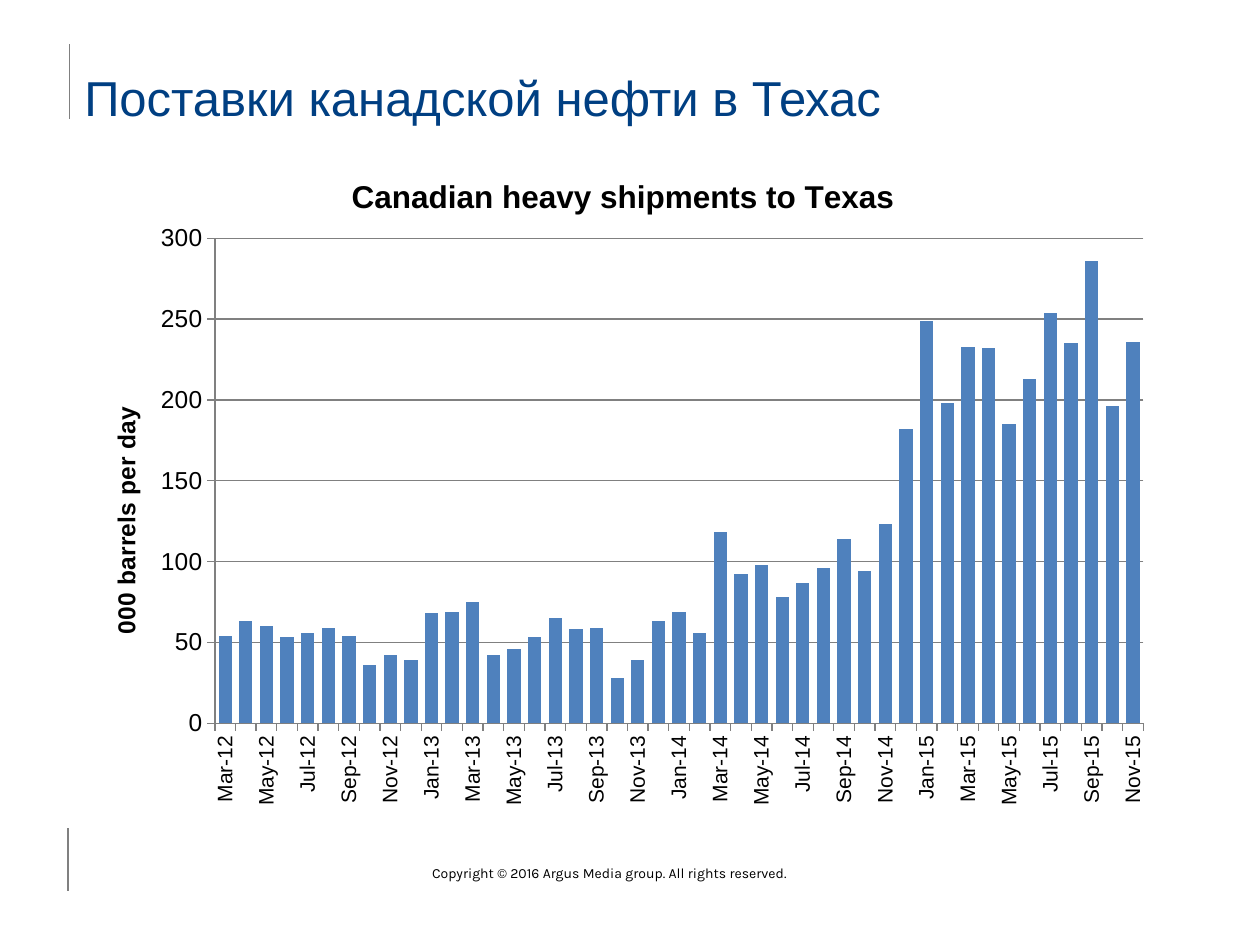
from itertools import accumulate

from lxml import etree
from pptx import Presentation
from pptx.chart.data import CategoryChartData
from pptx.dml.color import RGBColor
from pptx.enum import chart as ch, shapes, text
from pptx.oxml.ns import qn
from pptx.util import Cm, Pt

BLACK, GREY, NAVY, BLUE = "000000", "808080", "003F82", "4F81BD"

# Month ends as date serials, from March 2012 to November 2015
MONTH_DAYS = [30, 31, 30, 31, 31, 30, 31, 30, 31, 31, 28, 31]  # April to March
MONTH_ENDS = list(accumulate((MONTH_DAYS * 4)[:44], initial=40999))
SHIPMENTS = [
    54, 63, 60, 53, 56, 59, 54, 36, 42, 39,
    68, 69, 75, 42, 46, 53, 65, 58, 59, 28, 39, 63,
    69, 56, 118, 92, 98, 78, 87, 96, 114, 94, 123, 182,
    249, 198, 233, 232, 185, 213, 254, 235, 286, 196, 236,
]


def rgb(value):
    return RGBColor.from_string(value)


def set_attrs(obj, **values):
    for name, value in values.items():
        setattr(obj, name, value)


def set_font(font, size, color=BLACK, name="Arial", bold=False):
    set_attrs(font, size=Pt(size), name=name, bold=bold)
    font.color.rgb = rgb(color)


def set_line(line, color=GREY):
    line.color.rgb = rgb(color)
    line.width = Pt(0.75)


def add_rule(s, x, top, bottom):
    c = s.shapes.add_connector(shapes.MSO_CONNECTOR.STRAIGHT,
                               Cm(x), Cm(bottom), Cm(x), Cm(top))
    set_line(c.line)
    etree.SubElement(c._element.spPr, qn("a:effectLst"))


def add_text(s, box, words, font, **frame):
    tf = s.shapes.add_textbox(*map(Cm, box)).text_frame
    set_attrs(tf, word_wrap=True, **frame)
    r = tf.paragraphs[0].add_run()
    r.text = words
    set_font(r.font, **font)


def set_layout(element, index, **values):
    """Place a chart part by fractions of the chart area."""
    for old in element.findall(qn("c:layout")):
        element.remove(old)
    layout = etree.Element(qn("c:layout"))
    element.insert(index, layout)
    manual = etree.SubElement(layout, qn("c:manualLayout"))
    for tag, value in values.items():
        etree.SubElement(manual, qn("c:" + tag), val=str(value))


def set_title(title, words, size, x, y):
    r = title.text_frame.paragraphs[0].add_run()
    r.text = words
    set_font(r.font, size, bold=True)
    set_layout(title._element, 1, xMode="edge", yMode="edge", x=x, y=y)


def style_axis(axis, size, number_format):
    set_attrs(axis, major_tick_mark=ch.XL_TICK_MARK.OUTSIDE,
              minor_tick_mark=ch.XL_TICK_MARK.NONE)
    set_attrs(axis.tick_labels, number_format=number_format,
              number_format_is_linked=False)
    set_font(axis.tick_labels.font, size)
    set_line(axis.format.line)


def add_column_chart(s, box):
    data = CategoryChartData(number_format="0")
    data.categories = MONTH_ENDS
    data.categories.number_format = "mmm\\-yy"
    data.add_series("Series 1", SHIPMENTS)
    chart = s.shapes.add_chart(ch.XL_CHART_TYPE.COLUMN_CLUSTERED,
                               *map(Cm, box), data).chart
    set_font(chart.font, 10)
    chart.has_legend = False
    set_title(chart.chart_title, "Canadian heavy shipments to Texas", 18, 0.25, 0.05)

    # Columns
    plot = chart.plots[0]
    set_attrs(plot, gap_width=55, vary_by_categories=False)
    fill = plot.series[0].format.fill
    fill.solid()
    fill.fore_color.rgb = rgb(BLUE)

    # Value axis
    val = chart.value_axis
    style_axis(val, 14, "0")
    set_attrs(val, minimum_scale=0, maximum_scale=300, major_unit=50,
              has_major_gridlines=True)
    set_line(val.major_gridlines.format.line)
    set_title(val.axis_title, "000 barrels per day", 14, 0.03, 0.39)
    val.axis_title.text_frame._txBody.bodyPr.set("rot", "-5400000")

    # Month axis: upright labels, every second month
    cat = chart.category_axis
    style_axis(cat, 12, "mmm\\-yy")
    ax = cat._element
    ax.find(qn("c:txPr")).find(qn("a:bodyPr")).set("rot", "-5400000")
    last = ax.find(qn("c:noMultiLvlLbl"))
    for tag, step in (("c:tickLblSkip", "2"), ("c:tickMarkSkip", "1")):
        skip = etree.Element(qn(tag), val=step)
        last.addprevious(skip)

    set_layout(ax.getparent(), 0, layoutTarget="inner", xMode="edge",
               yMode="edge", x=0.13, y=0.15, w=0.85, h=0.71)


def main():
    prs = Presentation()
    set_attrs(prs, slide_width=Cm(25.4), slide_height=Cm(19.05))
    s = prs.slides.add_slide(prs.slide_layouts[6])

    # Margin rules
    add_rule(s, 1.4, 0.89, 2.39)
    add_rule(s, 1.37, 16.69, 17.96)

    # Heading
    add_text(s, (1.7, 0.84, 22.23, 1.7), "Поставки канадской нефти в Техас",
             {"size": 28, "color": NAVY},
             vertical_anchor=text.MSO_ANCHOR.BOTTOM,
             margin_left=0, margin_top=0, margin_right=0, margin_bottom=0)

    # Chart
    add_column_chart(s, (1.47, 2.74, 22.02, 13.77))

    # Copyright line
    add_text(s, (8.46, 17.3, 8.89, 1.02),
             "Copyright © 2016 Argus Media group. All rights reserved.",
             {"size": 8, "name": "Karla"})

    prs.save("out.pptx")


if __name__ == "__main__":
    main()
